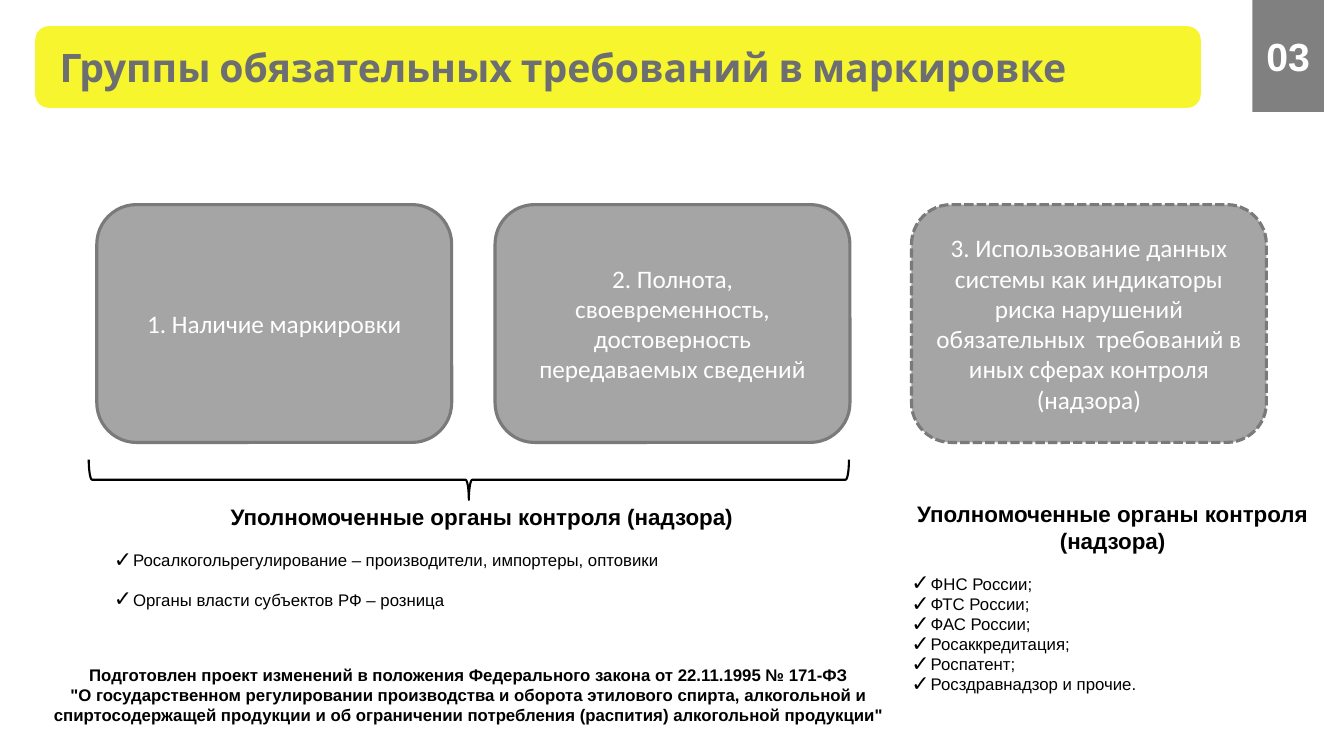
from lxml import etree
from pptx import Presentation
from pptx.dml.color import RGBColor
from pptx.enum.dml import MSO_LINE
from pptx.enum.shapes import MSO_SHAPE
from pptx.enum.text import MSO_ANCHOR, MSO_AUTO_SIZE, PP_ALIGN
from pptx.oxml.ns import qn
from pptx.util import Inches, Pt

ROUNDED, RECTANGLE, BRACE = (MSO_SHAPE.ROUNDED_RECTANGLE, MSO_SHAPE.RECTANGLE,
                             MSO_SHAPE.RIGHT_BRACE)
LEFT, CENTER = PP_ALIGN.LEFT, PP_ALIGN.CENTER
TOP, MIDDLE = MSO_ANCHOR.TOP, MSO_ANCHOR.MIDDLE
NO_AUTOFIT = MSO_AUTO_SIZE.NONE
DASHED = MSO_LINE.SQUARE_DOT
TWO_CONTENT = 3

BLACK, WHITE, YELLOW = "000000", "FFFFFF", "F6F52E"
TITLE_GREY, TAB_GREY, CARD_GREY, EDGE_GREY = "6D6E71", "808080", "A5A5A5", "7A7A7A"
LINE_GAP = 14

BODIES_HEADING = "Уполномоченные органы контроля (надзора)"
CARDS = [
    (0.96, "1. Наличие маркировки"),
    (4.91, "2. Полнота, своевременность, достоверность передаваемых сведений"),
    (9.04, "3. Использование данных системы как индикаторы риска нарушений "
           "обязательных  требований в иных сферах контроля (надзора)"),
]
ALCOHOL_BODIES = [
    "Росалкогольрегулирование – производители, импортеры, оптовики",
    "Органы власти субъектов РФ – розница",
]
OTHER_BODIES = ["ФНС России;", "ФТС России;", "ФАС России;", "Росаккредитация;",
                "Роспатент;", "Росздравнадзор и прочие."]
LAW_NOTE = [
    "Подготовлен проект изменений в положения Федерального закона от 22.11.1995 № 171-ФЗ",
    '"О государственном регулировании производства и оборота этилового спирта, алкогольной и '
    'спиртосодержащей продукции и об ограничении потребления (распития) алкогольной продукции"',
]


def rgb(color):
    return RGBColor.from_string(color)


def place(shape, box):
    shape.left, shape.top, shape.width, shape.height = map(Inches, box)


def set_frame(frame, anchor, insets):
    """Insets run left, top, right, bottom."""
    frame.word_wrap = True
    frame.auto_size = NO_AUTOFIT
    frame.vertical_anchor = anchor
    (frame.margin_left, frame.margin_top,
     frame.margin_right, frame.margin_bottom) = map(Inches, insets)


def write(para, text, size, color, name="Arial", bold=False, align=CENTER, before=0):
    para.text = text
    para.alignment = align
    para.space_before = Pt(before)
    font = para.font
    font.name, font.size, font.bold = name, Pt(size), bold
    font.color.rgb = rgb(color)


def set_bullet(para, char=None):
    """Hang a check mark before the paragraph, or clear its bullet and indent."""
    props = para._p.get_or_add_pPr()
    hang = Inches(0.19) if char else 0
    props.set("marL", str(hang))
    props.set("indent", str(-hang))
    if char:
        etree.SubElement(props, qn("a:buSzPct"), val="130000")
        etree.SubElement(props, qn("a:buFont"), typeface="Arial")
        etree.SubElement(props, qn("a:buChar"), char=char)
    else:
        etree.SubElement(props, qn("a:buNone"))


def add_shape(page, kind, box, fill=None, edge=None, width=0):
    shape = page.shapes.add_shape(kind, *map(Inches, box))
    shape.shadow.inherit = False
    if fill:
        shape.fill.solid()
        shape.fill.fore_color.rgb = rgb(fill)
    else:
        shape.fill.background()
    if edge:
        shape.line.color.rgb = rgb(edge)
        shape.line.width = Pt(width)
    else:
        shape.line.fill.background()
    return shape


def add_header(page, box):
    left, top, width, height = box
    banner = add_shape(page, ROUNDED, box, YELLOW)
    title = page.shapes.title
    place(title, box)
    banner._element.addnext(title._element)
    set_frame(title.text_frame, MIDDLE, (0.24, 0, 0.24, 0))
    write(title.text_frame.paragraphs[0], "Группы обязательных требований в маркировке",
          28, TITLE_GREY, "Cabin", True, LEFT)


def add_page_tab(page, box):
    tab = add_shape(page, RECTANGLE, box, TAB_GREY)
    set_frame(tab.text_frame, MIDDLE, (0, 0, 0, 0))
    write(tab.text_frame.paragraphs[0], "03", 28, WHITE, bold=True)


def add_card(page, box, text, dashed):
    card = add_shape(page, ROUNDED, box, CARD_GREY, EDGE_GREY, 2.25)
    if dashed:
        card.line.dash_style = DASHED
    set_frame(card.text_frame, MIDDLE, (0.1, 0.05, 0.1, 0.05))
    write(card.text_frame.paragraphs[0], text, 18, WHITE, "Calibri")


def add_brace(page, box):
    """Draw a brace that spans the box and points down."""
    left, top, width, height = box
    middle_x, middle_y = left + width / 2, top + height / 2
    brace = add_shape(page, BRACE,
                      (middle_x - height / 2, middle_y - width / 2, height, width),
                      edge=BLACK, width=1.5)
    brace.rotation = 90


def fill_bodies(placeholder, box, bodies, gap):
    place(placeholder, box)
    frame = placeholder.text_frame
    set_frame(frame, TOP, (0, 0, 0, 0.05))
    heading = frame.paragraphs[0]
    set_bullet(heading)
    write(heading, BODIES_HEADING, 16, BLACK, bold=True)
    for index, body in enumerate(bodies):
        para = frame.add_paragraph()
        set_bullet(para, "✓")
        write(para, body, 12, BLACK, align=LEFT, before=gap if index else LINE_GAP)


def add_law_note(page, box):
    frame = page.shapes.add_textbox(*map(Inches, box)).text_frame
    set_frame(frame, TOP, (0, 0, 0, 0.05))
    for index, text in enumerate(LAW_NOTE):
        para = frame.add_paragraph() if index else frame.paragraphs[0]
        write(para, text, 12, BLACK, bold=True)


def main():
    deck = Presentation()
    deck.slide_width, deck.slide_height = Inches(13.33), Inches(7.5)
    page = deck.slides.add_slide(deck.slide_layouts[TWO_CONTENT])
    add_page_tab(page, (12.42, 0, 0.71, 1.11))
    add_header(page, (0.35, 0.26, 11.56, 0.81))
    for left, text in CARDS:
        add_card(page, (left, 2.03, 3.52, 2.36), text, dashed=left == CARDS[-1][0])
    add_brace(page, (0.88, 4.56, 7.54, 0.4))
    fill_bodies(page.placeholders[1], (1.13, 4.99, 7.3, 1.13), ALCOHOL_BODIES, LINE_GAP)
    fill_bodies(page.placeholders[2], (9.04, 4.96, 3.99, 2.41), OTHER_BODIES, 0)
    add_law_note(page, (0.52, 6.59, 8.26, 0.66))
    deck.save("out.pptx")


if __name__ == "__main__":
    main()
